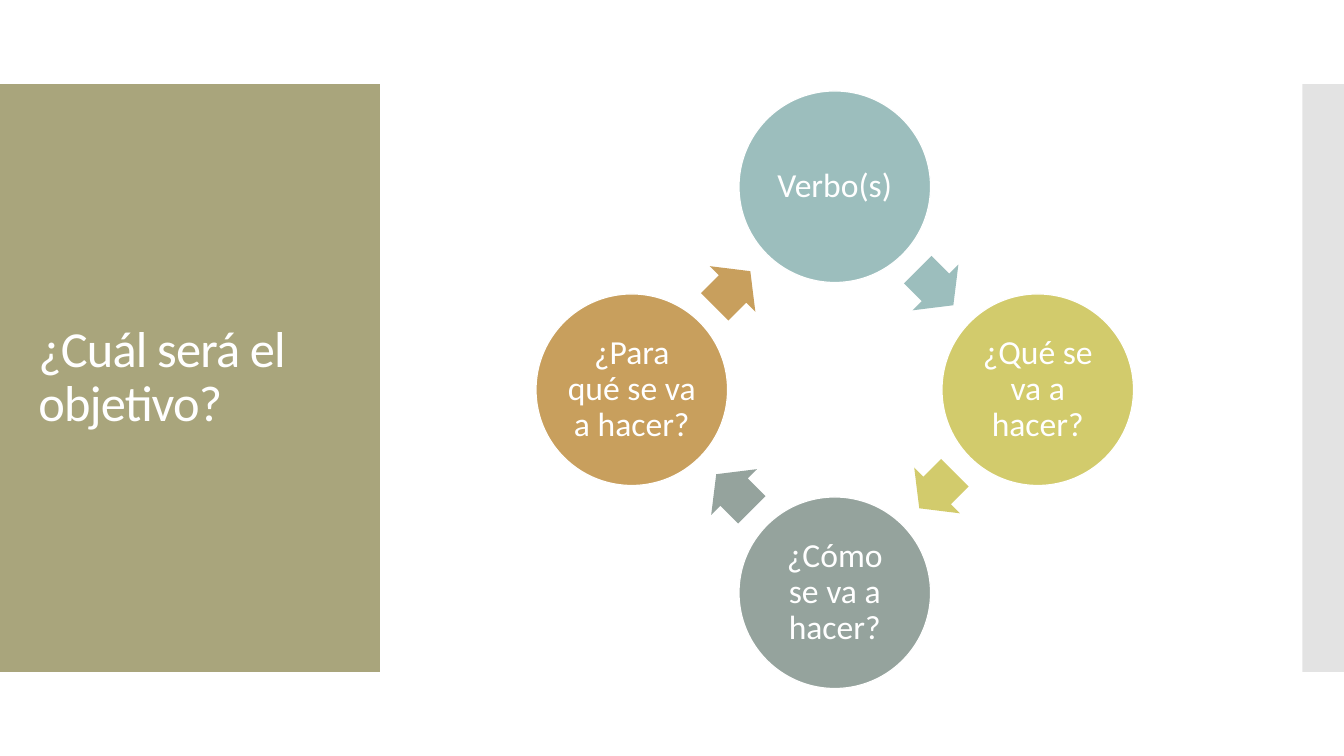
import math

from lxml import etree
from pptx import Presentation
from pptx.dml.color import RGBColor
from pptx.enum.shapes import MSO_SHAPE
from pptx.enum.text import MSO_ANCHOR, MSO_AUTO_SIZE, PP_ALIGN
from pptx.oxml.ns import qn
from pptx.util import Pt

RECT = MSO_SHAPE.RECTANGLE
OVAL = MSO_SHAPE.OVAL
ARROW = MSO_SHAPE.RIGHT_ARROW
MIDDLE = MSO_ANCHOR.MIDDLE
LEFT = PP_ALIGN.LEFT
CENTER = PP_ALIGN.CENTER
NO_FIT = MSO_AUTO_SIZE.NONE

FONT = "Calibri"
WHITE = "FFFFFF"
BAND_TOP, BAND_HEIGHT = 60, 420
STEPS = [
    ("Verbo(s)", "9CBEBD"),
    ("¿Qué se va a hacer?", "D2CB6C"),
    ("¿Cómo se va a hacer?", "95A39D"),
    ("¿Para qué se va a hacer?", "C89F5D"),
]


def rgb(value):
    return RGBColor.from_string(value)


def add_filled(s, kind, box, color):
    sp = s.shapes.add_shape(kind, *map(Pt, box))
    sp.shadow.inherit = False
    sp.fill.solid()
    sp.fill.fore_color.rgb = rgb(color)
    sp.line.fill.background()
    return sp


def write(tf, text, size, align):
    tf.word_wrap = True
    tf.auto_size = NO_FIT
    tf.vertical_anchor = MIDDLE
    p = tf.paragraphs[0]
    p.alignment = align
    p.line_spacing = 0.9
    r = p.add_run()
    r.text = text
    r.font.name = FONT
    r.font.size = Pt(size)
    r.font.color.rgb = rgb(WHITE)
    return r


def add_title_panel(s, box, text):
    add_filled(s, RECT, box, "A9A57C")
    left, top, width, height = box
    title = s.shapes.title
    title.left, title.top = Pt(left + 20.2), Pt(top + 28.8)
    title.width, title.height = Pt(width - 39.6), Pt(height - 57.6)
    r = write(title.text_frame, text, 36, LEFT)
    r.font.element.set("spc", "-60") if hasattr(r.font, "element") else r._r.get_or_add_rPr().set("spc", "-60")
    title.element.getparent().append(title.element)


def add_edge_band(s, box):
    sp = add_filled(s, RECT, box, "C8C8C8")
    color = sp.element.spPr.find(qn("a:solidFill")).find(qn("a:srgbClr"))
    etree.SubElement(color, qn("a:alpha"), val="50000")


def add_cycle(s, box, steps):
    left, top, width, height = box
    diameter = 136.8
    arrow_width, arrow_height = 36, 46.2
    arrow_lag = 0.76
    radius = (width - diameter) / 2
    cx, cy = left + width / 2, top + height / 2
    turn = 360 / len(steps)
    for i, (text, color) in enumerate(steps):
        angle = math.radians(i * turn - 90)
        x = cx + radius * math.cos(angle)
        y = cy + radius * math.sin(angle)
        circle = add_filled(
            s, OVAL, (x - diameter / 2, y - diameter / 2, diameter, diameter), color)
        circle.line.color.rgb = rgb(WHITE)
        circle.line.width = Pt(0.85)
        tf = circle.text_frame
        tf.margin_left = tf.margin_right = tf.margin_top = tf.margin_bottom = Pt(2.4)
        write(tf, text, 24, CENTER)

        heading = (i + 0.5) * turn
        travel = math.radians(heading)
        reach = radius * math.cos(math.radians(turn / 2))
        x = cx + reach * math.sin(travel) - arrow_lag * math.cos(travel)
        y = cy - reach * math.cos(travel) - arrow_lag * math.sin(travel)
        arrow = add_filled(
            s, ARROW,
            (x - arrow_width / 2, y - arrow_height / 2, arrow_width, arrow_height), color)
        arrow.adjustments[0] = 0.6
        arrow.adjustments[1] = 0.5
        arrow.rotation = heading


def main():
    prs = Presentation()
    prs.slide_width, prs.slide_height = Pt(960), Pt(540)
    s = prs.slides.add_slide(prs.slide_layouts[5])
    add_edge_band(s, (930.2, BAND_TOP, 29.8, BAND_HEIGHT))
    add_title_panel(s, (0, BAND_TOP, 271.4, BAND_HEIGHT), "¿Cuál será el objetivo?")
    add_cycle(s, (382.9, 65, 426.8, 426.8), STEPS)
    prs.save("out.pptx")


if __name__ == "__main__":
    main()
